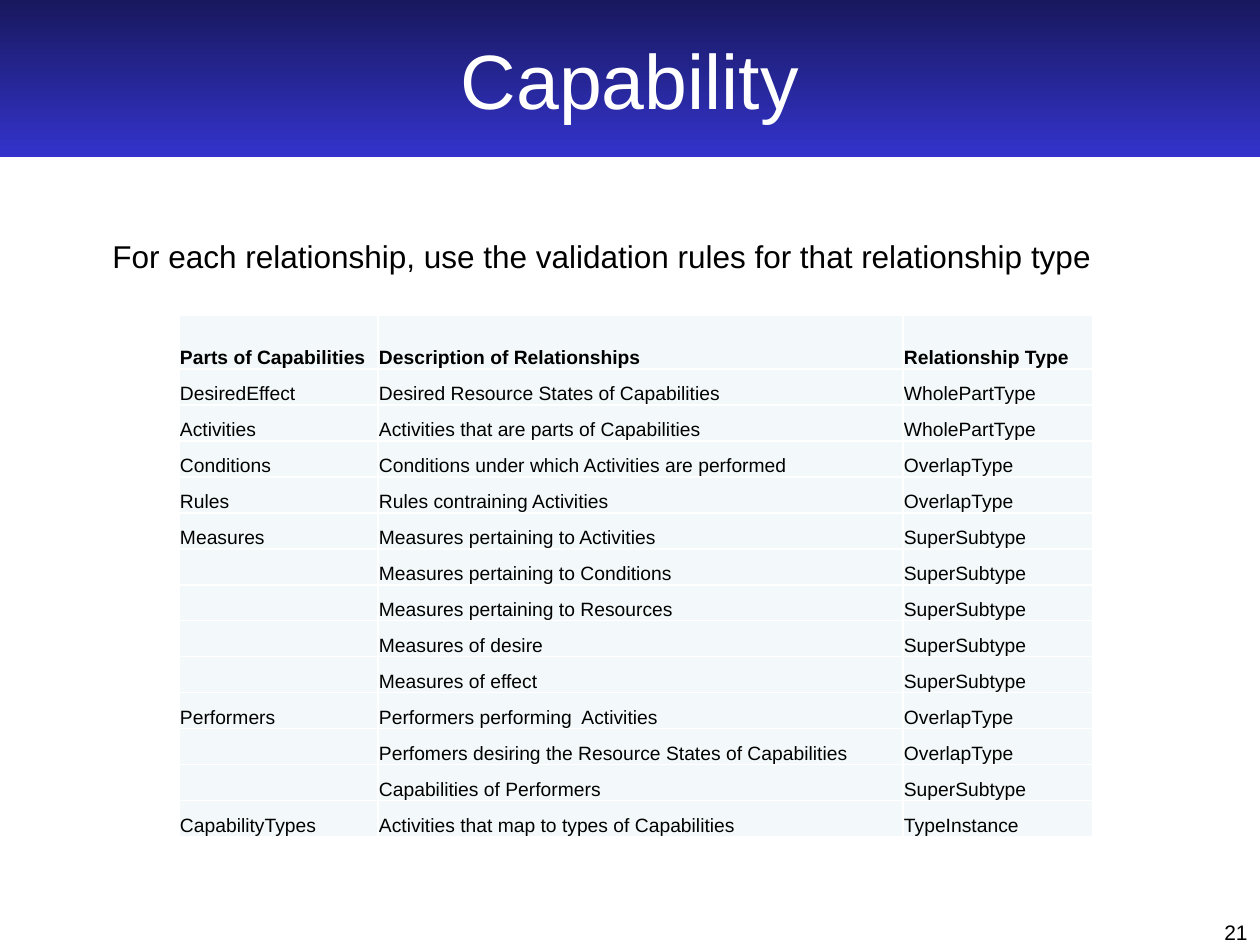
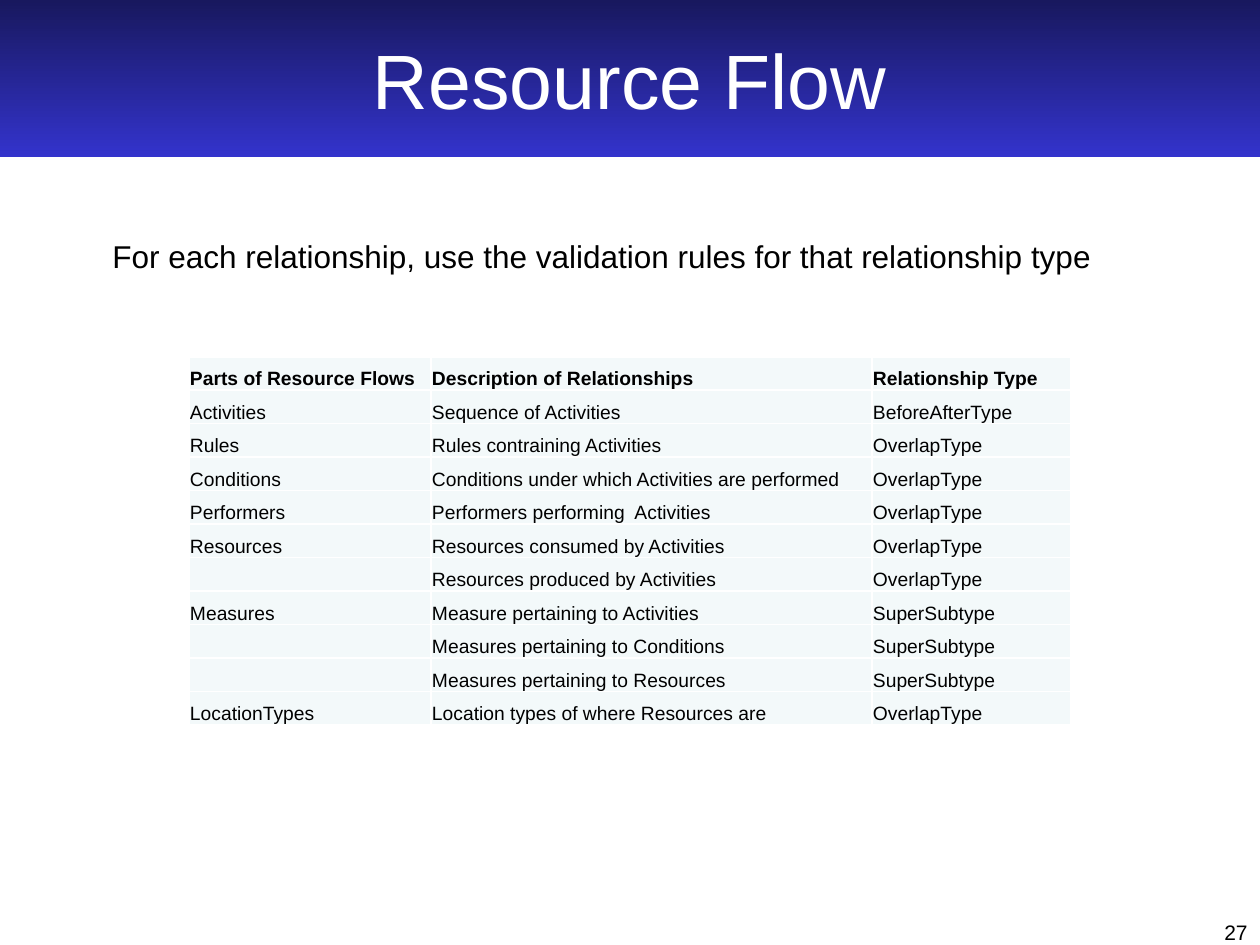
from lxml import etree
from pptx import Presentation
from pptx.dml.color import RGBColor
from pptx.enum.shapes import MSO_SHAPE
from pptx.enum.text import MSO_ANCHOR, PP_ALIGN
from pptx.oxml.ns import qn
from pptx.util import Pt

RECTANGLE = MSO_SHAPE.RECTANGLE
LEFT, CENTER, RIGHT = PP_ALIGN.LEFT, PP_ALIGN.CENTER, PP_ALIGN.RIGHT
MIDDLE, BOTTOM = MSO_ANCHOR.MIDDLE, MSO_ANCHOR.BOTTOM
PX = 914400 / 126
FONT = "Arial"
BLACK, WHITE = "000000", "FFFFFF"
BAND_TOP, BAND_BOTTOM = "18185E", "3333CC"
CELL_FILL = "F3F9FA"
BORDER_SIDES = ("a:lnL", "a:lnR", "a:lnT", "a:lnB")
GUIDANCE = "For each relationship, use the validation rules for that relationship type"

capability_rows = [
    ("Parts of Capabilities", "Description of Relationships", "Relationship Type"),
    ("DesiredEffect", "Desired Resource States of Capabilities", "WholePartType"),
    ("Activities", "Activities that are parts of Capabilities", "WholePartType"),
    ("Conditions", "Conditions under which Activities are performed", "OverlapType"),
    ("Rules", "Rules contraining Activities", "OverlapType"),
    ("Measures", "Measures pertaining to Activities", "SuperSubtype"),
    ("", "Measures pertaining to Conditions", "SuperSubtype"),
    ("", "Measures pertaining to Resources", "SuperSubtype"),
    ("", "Measures of desire", "SuperSubtype"),
    ("", "Measures of effect", "SuperSubtype"),
    ("Performers", "Performers performing  Activities", "OverlapType"),
    ("", "Perfomers desiring the Resource States of Capabilities", "OverlapType"),
    ("", "Capabilities of Performers", "SuperSubtype"),
    ("CapabilityTypes", "Activities that map to types of Capabilities", "TypeInstance"),
]
resource_flow_rows = [
    ("Parts of Resource Flows", "Description of Relationships", "Relationship Type"),
    ("Activities", "Sequence of Activities", "BeforeAfterType"),
    ("Rules", "Rules contraining Activities", "OverlapType"),
    ("Conditions", "Conditions under which Activities are performed", "OverlapType"),
    ("Performers", "Performers performing  Activities", "OverlapType"),
    ("Resources", "Resources consumed by Activities", "OverlapType"),
    ("", "Resources produced by Activities", "OverlapType"),
    ("Measures", "Measure pertaining to Activities", "SuperSubtype"),
    ("", "Measures pertaining to Conditions", "SuperSubtype"),
    ("", "Measures pertaining to Resources", "SuperSubtype"),
    ("LocationTypes", "Location types of where Resources are", "OverlapType"),
]
pages = [
    dict(title="Capability", number="21", rows=capability_rows, left=179, top=315,
         height=522, header_height=54, widths=(199, 525, 190)),
    dict(title="Resource Flow", number="27", rows=resource_flow_rows, left=189, top=357,
         height=368, header_height=33, widths=(242, 441, 199)),
]


def rgb(color):
    return RGBColor.from_string(color)


def write(frame, text, size, color=BLACK, bold=False, align=LEFT):
    para = frame.paragraphs[0]
    para.alignment = align
    if not text:
        etree.SubElement(para._p, qn("a:endParaRPr"), sz=str(size * 100))
        return
    span = para.add_run()
    span.text = text
    span.font.name = FONT
    span.font.size = Pt(size)
    span.font.bold = bold
    span.font.color.rgb = rgb(color)


deck = Presentation()
deck.slide_width = round(1260 * PX)
deck.slide_height = round(945 * PX)

for content in pages:
    page = deck.slides.add_slide(deck.slide_layouts[6])

    band = page.shapes.add_shape(RECTANGLE, 0, 0, deck.slide_width, round(157 * PX))
    band.shadow.inherit = False
    band.line.fill.background()
    band.fill.gradient()
    band.fill.gradient_angle = 270
    for stop, color in zip(band.fill.gradient_stops, (BAND_TOP, BAND_BOTTOM)):
        stop.color.rgb = rgb(color)
    band.text_frame.vertical_anchor = MIDDLE
    write(band.text_frame, content["title"], 44, color=WHITE, align=CENTER)

    number_box = page.shapes.add_textbox(*(round(n * PX) for n in (966, 913, 294, 32)))
    number_box.text_frame.word_wrap = True
    write(number_box.text_frame, content["number"], 12, align=RIGHT)

    guidance_box = page.shapes.add_textbox(*(round(n * PX) for n in (100, 231, 1013, 50)))
    guidance_box.text_frame.word_wrap = False
    write(guidance_box.text_frame, GUIDANCE, 18)

    rows, widths = content["rows"], content["widths"]
    area = (content["left"], content["top"], sum(widths), content["height"])
    table = page.shapes.add_table(len(rows), len(widths), *(round(n * PX) for n in area)).table
    table.first_row = False
    table.horz_banding = False
    for column, width in zip(table.columns, widths):
        column.width = round(width * PX)
    body_height = (content["height"] - content["header_height"]) / (len(rows) - 1)
    for row_index, texts in enumerate(rows):
        row_height = body_height if row_index else content["header_height"]
        table.rows[row_index].height = round(row_height * PX)
        for column_index, text in enumerate(texts):
            cell = table.cell(row_index, column_index)
            cell.margin_left = cell.margin_right = cell.margin_top = round(PX)
            cell.margin_bottom = 0
            cell.vertical_anchor = BOTTOM
            for side in BORDER_SIDES:
                border = etree.SubElement(cell._tc.tcPr, qn(side), w=str(Pt(1)))
                border_fill = etree.SubElement(border, qn("a:solidFill"))
                etree.SubElement(border_fill, qn("a:srgbClr"), val=WHITE)
            cell.fill.solid()
            cell.fill.fore_color.rgb = rgb(CELL_FILL)
            write(cell.text_frame, text, 11, bold=row_index == 0)

deck.save("out.pptx")
